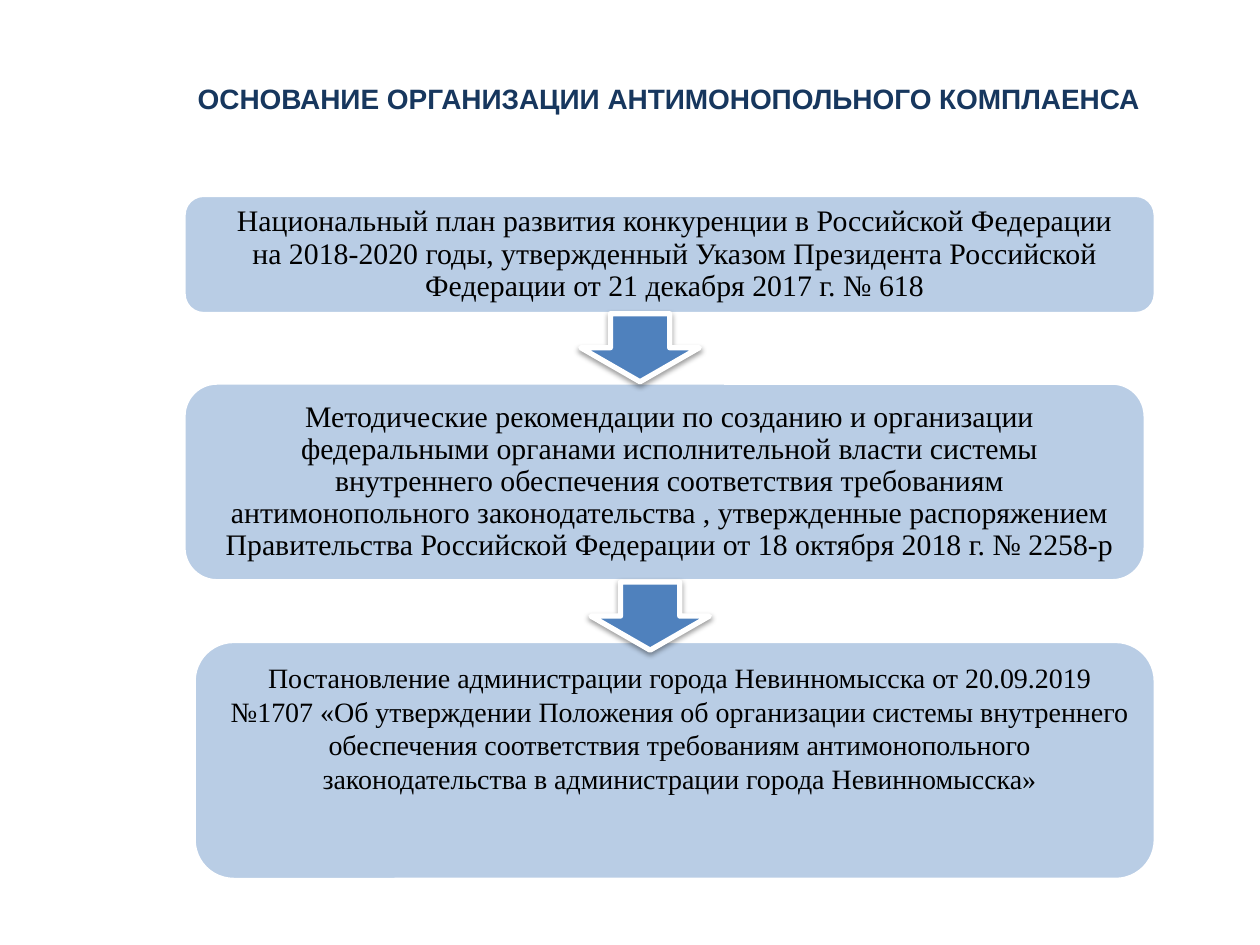
from lxml import etree
from pptx import Presentation
from pptx import util as u
from pptx.dml.color import RGBColor
from pptx.enum import shapes, text
from pptx.oxml import ns

NAVY, PALE, BLUE, WHITE, BLACK = "17375E", "B9CDE5", "4F81BD", "FFFFFF", "000000"
CORNER = 0.05  # text inset of a rounded box, as a share of its height


def rgb(value):
    return RGBColor.from_string(value)


class Deck:
    """Holds the style and the current slide."""

    def __init__(self):
        self.prs = Presentation()
        self.prs.slide_width, self.prs.slide_height = u.Inches(10), u.Inches(7.5)
        self.s = self.prs.slides.add_slide(self.prs.slide_layouts[6])

    def paragraph(self, tf, content, font, size, color, bold=False):
        tf.word_wrap = True
        p = tf.paragraphs[0]
        p.text = content
        p.alignment = text.PP_ALIGN.CENTER
        p.font.name, p.font.size, p.font.bold = font, u.Pt(size), bold
        p.font.color.rgb = rgb(color)
        return p

    def title(self, content, x, y, w, h):
        tf = self.s.shapes.add_textbox(*map(u.Inches, (x, y, w, h))).text_frame
        self.paragraph(tf, content, "Arial", 16, NAVY, bold=True)

    def shape(self, kind, x, y, w, h, fill, line_width):
        sp = self.s.shapes.add_shape(kind, *map(u.Inches, (x, y, w, h)))
        sp.shadow.inherit = False
        sp.fill.solid()
        sp.fill.fore_color.rgb = rgb(fill)
        sp.line.color.rgb = rgb(WHITE)
        sp.line.width = u.Pt(line_width)
        return sp

    def box(self, content, x, y, w, h, size=17, spacing=0.9, top=None):
        sp = self.shape(shapes.MSO_SHAPE.ROUNDED_RECTANGLE, x, y, w, h, PALE, 2)
        tf = sp.text_frame
        tf.margin_left = u.Inches(0.28 - CORNER * h)
        tf.margin_right = u.Inches(0.2 - CORNER * h)
        tf.margin_top = u.Inches(top or 0)
        tf.margin_bottom = 0
        anchor = text.MSO_ANCHOR
        tf.vertical_anchor = anchor.MIDDLE if top is None else anchor.TOP
        p = self.paragraph(tf, content, "Times New Roman", size, BLACK)
        p.line_spacing = spacing

    def arrow(self, x, y):
        sp = self.shape(shapes.MSO_SHAPE.DOWN_ARROW, x, y, 0.94, 0.54, BLUE, 3)
        # Soft shadow straight below the arrow
        effects = sp._element.spPr.find(ns.qn("a:effectLst"))
        shadow = etree.SubElement(effects, ns.qn("a:outerShdw"), blurRad=str(u.Pt(3.1)),
                                  dist=str(u.Pt(1.6)), dir="5400000", rotWithShape="0")
        color = etree.SubElement(shadow, ns.qn("a:srgbClr"), val=BLACK)
        etree.SubElement(color, ns.qn("a:alpha"), val="38000")


def main():
    deck = Deck()
    deck.title("ОСНОВАНИЕ ОРГАНИЗАЦИИ АНТИМОНОПОЛЬНОГО КОМПЛАЕНСА", 1.06, 0.6, 8.5, 0.63)

    # Legal acts, from national to city level
    deck.box("Национальный план развития конкуренции в Российской Федерации "
             "на 2018-2020 годы, утвержденный Указом Президента Российской "
             "Федерации от 21 декабря 2017 г. № 618", 1.46, 1.55, 7.71, 0.94)
    deck.box("Методические рекомендации по созданию и организации федеральными "
             "органами исполнительной власти системы внутреннего обеспечения "
             "соответствия требованиям антимонопольного законодательства , "
             "утвержденные распоряжением Правительства Российской Федерации "
             "от 18 октября 2018 г. № 2258-р", 1.46, 3.04, 7.63, 1.57)
    deck.box("Постановление администрации города Невинномысска от 20.09.2019 "
             "№1707 «Об утверждении Положения об организации системы внутреннего "
             "обеспечения соответствия требованиям антимонопольного "
             "законодательства в администрации города Невинномысска»",
             1.54, 5.09, 7.63, 1.89, size=16, spacing=1.0, top=0.06)

    # Arrows between the acts
    for x, y in ((4.61, 2.49), (4.69, 4.62)):
        deck.arrow(x, y)

    deck.prs.save("out.pptx")


if __name__ == "__main__":
    main()
